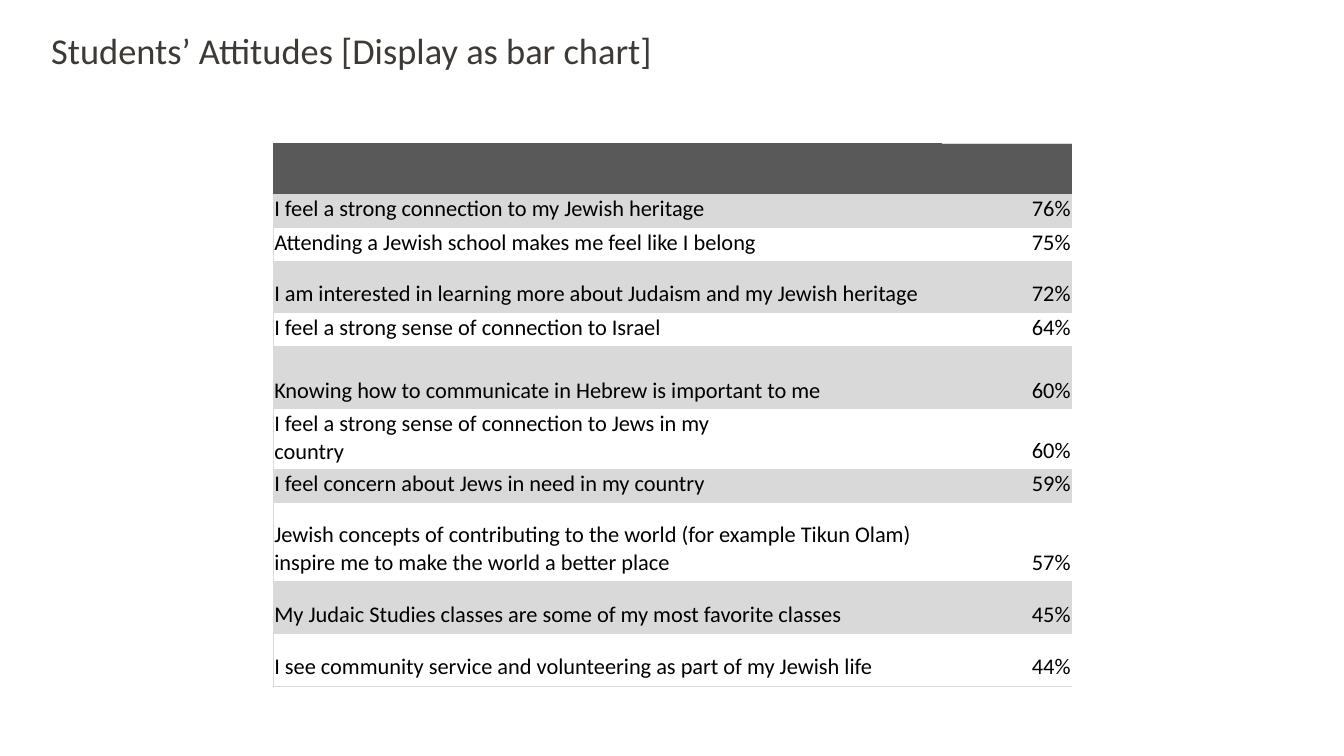
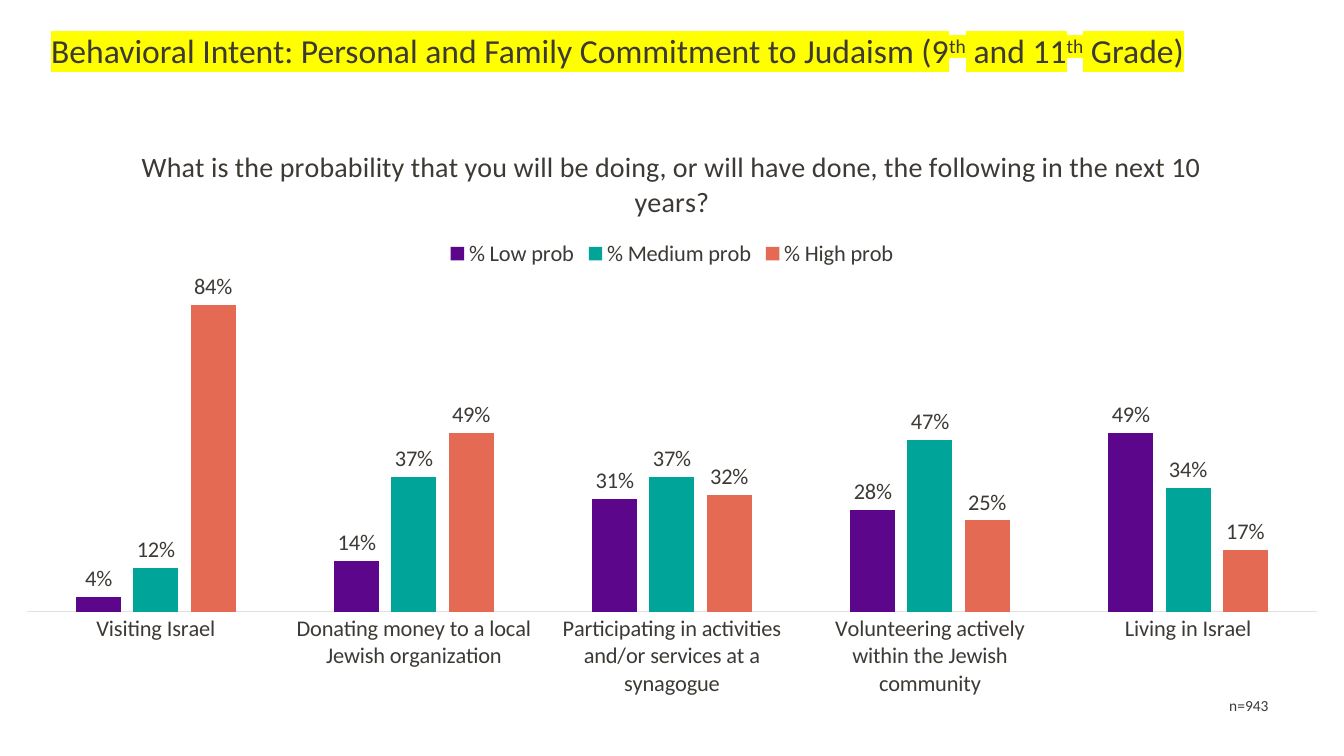
"""Build two slides on students' attitudes and behavioural intent."""
from dataclasses import dataclass

from lxml.etree import SubElement
from pptx import Presentation
from pptx.chart.data import CategoryChartData
from pptx.dml.color import RGBColor
from pptx.enum.chart import XL_CHART_TYPE as ChartType
from pptx.enum.chart import XL_LABEL_POSITION as LabelPosition
from pptx.enum.chart import XL_LEGEND_POSITION as LegendPosition
from pptx.enum.chart import XL_TICK_MARK as TickMark
from pptx.enum.text import MSO_ANCHOR as Anchor
from pptx.enum.text import PP_ALIGN as Align
from pptx.oxml import parse_xml
from pptx.oxml.ns import nsdecls, qn
from pptx.util import Cm, Pt

FONT = "Calibri"
INK = RGBColor(0x3D, 0x39, 0x35)
BLACK = RGBColor(0x00, 0x00, 0x00)
HEADER_GREY = RGBColor(0x59, 0x59, 0x59)
BAND_GREY = RGBColor(0xD9, 0xD9, 0xD9)
AXIS_GREY = RGBColor(0xE3, 0xE1, 0xDF)
PURPLE = RGBColor(0x5C, 0x06, 0x8C)
TEAL = RGBColor(0x00, 0xA4, 0x99)
CORAL = RGBColor(0xE5, 0x6A, 0x54)
YELLOW = RGBColor(0xFF, 0xFF, 0x00)
NO_STYLE = "{2D5ABB26-0587-4C30-8999-92F81FD0307C}"


@dataclass(frozen=True)
class Span:
    text: str
    superscript: bool = False


@dataclass(frozen=True)
class Attitude:
    statement: str
    share: str
    height: float


@dataclass(frozen=True)
class Probability:
    name: str
    values: tuple[float, ...]
    color: RGBColor


ATTITUDES = (
    Attitude("I feel a strong connection to my Jewish heritage", "76%", 0.76),
    Attitude("Attending a Jewish school makes me feel like I belong", "75%", 0.76),
    Attitude("I am interested in learning more about Judaism and my Jewish heritage", "72%", 1.3),
    Attitude("I feel a strong sense of connection to Israel", "64%", 0.76),
    Attitude("Knowing how to communicate in Hebrew is important to me", "60%", 1.6),
    Attitude("I feel a strong sense of connection to Jews in my \vcountry", "60%", 1.32),
    Attitude("I feel concern about Jews in need in my country", "59%", 0.76),
    Attitude("Jewish concepts of contributing to the world (for example Tikun Olam) "
             "inspire me to make the world a better place", "57%", 1.98),
    Attitude("My Judaic Studies classes are some of my most favorite classes", "45%", 1.32),
    Attitude("I see community service and volunteering as part of my Jewish life", "44%", 1.32),
)
HEADER_HEIGHT = 1.3
COLUMN_WIDTHS = (16.84, 3.28)

ACTIVITIES = (
    "Visiting Israel",
    "Donating money to a local Jewish organization",
    "Participating in activities and/or services at a synagogue",
    "Volunteering actively within the Jewish community",
    "Living in Israel",
)
PROBABILITIES = (
    Probability("% Low prob", (0.04, 0.14, 0.31, 0.28, 0.49), PURPLE),
    Probability("% Medium prob", (0.12, 0.37, 0.37, 0.47, 0.34), TEAL),
    Probability("% High prob", (0.84, 0.49, 0.32, 0.25, 0.17), CORAL),
)


def format_font(font, size: float, color: RGBColor = INK) -> None:
    font.size = Pt(size)
    font.color.rgb = color
    font.name = FONT


def highlight(run, color: RGBColor) -> None:
    properties = run._r.get_or_add_rPr()
    mark = parse_xml(f'<a:highlight {nsdecls("a")}><a:srgbClr val="{color}"/></a:highlight>')
    properties.find(qn("a:solidFill")).addnext(mark)


def add_title(slide, spans: tuple[Span, ...], size: float, width: float,
              marker: RGBColor | None = None) -> None:
    frame = slide.shapes.add_textbox(Cm(1.04), Cm(0.15), Cm(width), Cm(2.34)).text_frame
    frame.word_wrap = True
    frame.vertical_anchor = Anchor.MIDDLE
    paragraph = frame.paragraphs[0]
    paragraph.line_spacing = 0.9
    for span in spans:
        run = paragraph.add_run()
        run.text = span.text
        format_font(run.font, size)
        if span.superscript:
            run._r.get_or_add_rPr().set("baseline", "30000")
        if marker is not None:
            highlight(run, marker)


def add_border(cell, side: str) -> None:
    line = parse_xml(
        f'<a:ln{side} {nsdecls("a")} w="{Pt(0.5)}"><a:solidFill>'
        f'<a:srgbClr val="{BAND_GREY}"/></a:solidFill></a:ln{side}>')
    cell._tc.get_or_add_tcPr().insert(0, line)


def fill_cell(cell, text: str, alignment: Align, banded: bool) -> None:
    cell.margin_left = cell.margin_top = cell.margin_right = Cm(0.03)
    cell.margin_bottom = Cm(0.13)
    cell.vertical_anchor = Anchor.BOTTOM
    paragraph = cell.text_frame.paragraphs[0]
    paragraph.text = text
    paragraph.alignment = alignment
    for run in paragraph.runs:
        format_font(run.font, 16, BLACK)
    if banded:
        cell.fill.solid()
        cell.fill.fore_color.rgb = BAND_GREY
    else:
        cell.fill.background()


def add_attitude_table(slide) -> None:
    heights = (HEADER_HEIGHT, *(attitude.height for attitude in ATTITUDES))
    table = slide.shapes.add_table(
        len(heights), len(COLUMN_WIDTHS), Cm(6.88), Cm(3.6),
        Cm(sum(COLUMN_WIDTHS)), Cm(sum(heights))).table
    table.first_row = table.horz_banding = False
    table._tbl.tblPr.find(qn("a:tableStyleId")).text = NO_STYLE
    for column, width in zip(table.columns, COLUMN_WIDTHS):
        column.width = Cm(width)
    for row, height in zip(table.rows, heights):
        row.height = Cm(height)
    for cell in table.rows[0].cells:
        cell.fill.solid()
        cell.fill.fore_color.rgb = HEADER_GREY
    add_border(table.cell(0, 1), "T")
    for index, attitude in enumerate(ATTITUDES, start=1):
        statement, share = table.rows[index].cells
        banded = index % 2 == 1
        fill_cell(statement, attitude.statement, Align.LEFT, banded)
        fill_cell(share, attitude.share, Align.RIGHT, banded)
        if index == len(ATTITUDES):
            add_border(statement, "B")
            add_border(share, "B")
        add_border(statement, "L")


def place_plot(chart, x: float, y: float, width: float, height: float) -> None:
    plot_area = chart._chartSpace.chart.plotArea
    for layout in plot_area.findall(qn("c:layout")):
        plot_area.remove(layout)
    layout = parse_xml(f'<c:layout {nsdecls("c")}/>')
    plot_area.insert(0, layout)
    manual = SubElement(layout, qn("c:manualLayout"))
    settings = {"layoutTarget": "inner", "xMode": "edge", "yMode": "edge",
                "x": x, "y": y, "w": width, "h": height}
    for tag, value in settings.items():
        SubElement(manual, qn(f"c:{tag}")).set("val", str(value))


def add_probability_chart(slide) -> None:
    data = CategoryChartData(number_format="0%")
    data.categories = ACTIVITIES
    for probability in PROBABILITIES:
        data.add_series(probability.name, probability.values)
    chart = slide.shapes.add_chart(
        ChartType.COLUMN_CLUSTERED, Cm(0), Cm(3.15), Cm(33.86), Cm(14.78), data).chart
    format_font(chart.font, 16)

    chart.has_title = True
    title = chart.chart_title
    title.include_in_layout = False
    title.text_frame.text = ("What is the probability that you will be doing, or will have done, "
                             "the following in the next 10 years?")
    format_font(title.text_frame.paragraphs[0].runs[0].font, 20)
    title.text_frame.paragraphs[0].runs[0].font.bold = False

    chart.has_legend = True
    chart.legend.position = LegendPosition.TOP
    chart.legend.include_in_layout = False
    format_font(chart.legend.font, 16)

    category_axis = chart.category_axis
    category_axis.major_tick_mark = category_axis.minor_tick_mark = TickMark.NONE
    category_axis.format.line.color.rgb = AXIS_GREY
    category_axis.format.line.width = Pt(0.75)
    format_font(category_axis.tick_labels.font, 16)

    value_axis = chart.value_axis
    value_axis.visible = False
    value_axis.has_major_gridlines = False
    value_axis.minimum_scale = 0
    value_axis.maximum_scale = 0.9

    plot = chart.plots[0]
    plot.gap_width = 219
    plot.overlap = -27
    plot.vary_by_categories = False
    for series, probability in zip(plot.series, PROBABILITIES):
        series.format.fill.solid()
        series.format.fill.fore_color.rgb = probability.color
        labels = series.data_labels
        labels.show_value = True
        labels.number_format = "0%"
        labels.number_format_is_linked = False
        labels.position = LabelPosition.OUTSIDE_END
        format_font(labels.font, 16)
    place_plot(chart, 0.02, 0.27, 0.96, 0.56)


def add_sample_size(slide) -> None:
    frame = slide.shapes.add_textbox(Cm(30.18), Cm(17.42), Cm(2.57), Cm(0.74)).text_frame
    frame.word_wrap = True
    frame.text = "n=943"
    paragraph = frame.paragraphs[0]
    paragraph.alignment = Align.CENTER
    format_font(paragraph.runs[0].font, 11)


def main() -> None:
    presentation = Presentation()
    presentation.slide_width = Cm(33.86)
    presentation.slide_height = Cm(19.05)
    blank = presentation.slide_layouts[6]

    attitudes = presentation.slides.add_slide(blank)
    add_title(attitudes, (Span("Students’ Attitudes [Display as bar chart]"),), 26, 29.21)
    add_attitude_table(attitudes)

    intent = presentation.slides.add_slide(blank)
    add_title(intent, (
        Span("Behavioral Intent: Personal and Family Commitment to Judaism (9"),
        Span("th", superscript=True),
        Span(" and 11"),
        Span("th", superscript=True),
        Span(" Grade)"),
    ), 24, 32.82, YELLOW)
    add_probability_chart(intent)
    add_sample_size(intent)

    presentation.save("out.pptx")


if __name__ == "__main__":
    main()
